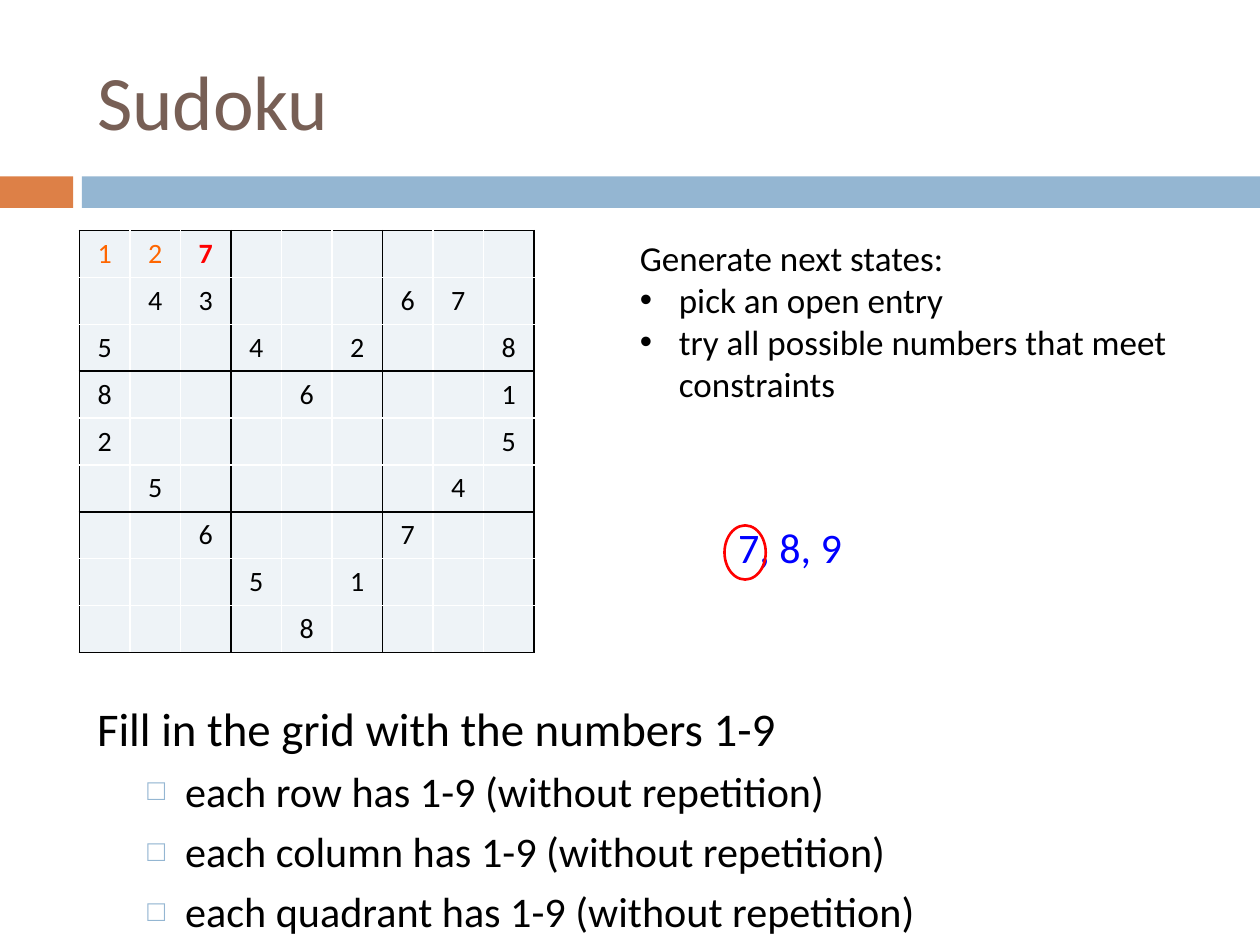
import pptx
import pptx.util
import pptx.dml.color
import pptx.enum.shapes
import pptx.enum.text
import pptx.oxml
import pptx.oxml.ns
import lxml.etree

COLS, ROWS = 100, 75
FONT = "Calibri"
COLORS = {
    "title": "775F55", "accent": "DD8047", "band": "94B6D2",
    "cell": "EEF3F7", "black": "000000", "white": "FFFFFF",
    "filled": "FF6600", "red": "FF0000", "blue": "0000FF",
}
GRID = [
    "127......",
    ".43...67.",
    "5..4.2..8",
    "8...6...1",
    "2.......5",
    ".5.....4.",
    "..6...7..",
    "...5.1...",
    "....8....",
]
TRIED = {(0, 0): "filled", (0, 1): "filled", (0, 2): "red"}
ALIGN = pptx.enum.text.PP_ALIGN
SHAPE = pptx.enum.shapes.MSO_SHAPE

prs = pptx.Presentation()
prs.slide_width = pptx.util.Inches(10)
prs.slide_height = pptx.util.Inches(7.5)


def place(x, y, w, h):
    col, row = prs.slide_width / COLS, prs.slide_height / ROWS
    return [pptx.util.Emu(round(n)) for n in (x * col, y * row, w * col, h * row)]


def move(sp, box):
    sp.left, sp.top, sp.width, sp.height = place(*box)


def rgb(name):
    return pptx.dml.color.RGBColor.from_string(COLORS[name])


def style(p, size, color, bold=False):
    p.font.name = FONT
    p.font.size = pptx.util.Pt(size)
    p.font.bold = bold
    p.font.color.rgb = rgb(color)


def add_child(parent, tag, **attrs):
    child = lxml.etree.SubElement(parent, pptx.oxml.ns.qn(tag))
    for key, value in attrs.items():
        child.set(key, str(value))
    return child


def set_bullet(p, char=None, left=0, hang=0, color="black", percent=100):
    pPr = p._p.get_or_add_pPr()
    pPr.set("marL", str(pptx.util.Inches(left)))
    pPr.set("indent", str(-pptx.util.Inches(hang)))
    if char is None:
        add_child(pPr, "a:buNone")
        return
    add_child(add_child(pPr, "a:buClr"), "a:srgbClr", val=COLORS[color])
    add_child(pPr, "a:buSzPct", val=percent * 1000)
    add_child(pPr, "a:buFont", typeface="Arial")
    add_child(pPr, "a:buChar", char=char)


def fill_paragraphs(tf, lines):
    tf.text = "\n".join(lines)
    return tf.paragraphs


def set_borders(cell, **sides):
    tcPr = cell._tc.get_or_add_tcPr()
    for side in "LRTB":
        ln = add_child(tcPr, "a:ln" + side, w=pptx.util.Pt(1))
        add_child(add_child(ln, "a:solidFill"), "a:srgbClr", val=COLORS[sides[side]])


def add_bars(s, box):
    x, y, w, h = box
    gap = 6.5
    for left, width, color in ((x, 5.8, "accent"), (x + gap, w - gap, "band")):
        sp = s.shapes.add_shape(SHAPE.RECTANGLE, *place(left, y, width, h))
        sp.shadow.inherit = False
        sp.fill.solid()
        sp.fill.fore_color.rgb = rgb(color)
        sp.line.fill.background()


def add_title(s, box):
    sp = s.shapes.title
    move(sp, box)
    tf = sp.text_frame
    tf.vertical_anchor = pptx.enum.text.MSO_ANCHOR.MIDDLE
    p = fill_paragraphs(tf, ["Sudoku"])[0]
    p.alignment = ALIGN.LEFT
    style(p, 44, "title")


def add_sudoku(s, box):
    n = len(GRID)
    table = s.shapes.add_table(n, n, *place(*box)).table
    table.first_row = table.horz_banding = False
    for r, line in enumerate(GRID):
        for c, digit in enumerate(line):
            cell = table.cell(r, c)
            set_borders(
                cell,
                L="black" if c % 3 == 0 else "white",
                R="black" if c % 3 == 2 else "white",
                T="black" if r % 3 == 0 else "white",
                B="black" if r % 3 == 2 else "white",
            )
            cell.fill.solid()
            cell.fill.fore_color.rgb = rgb("cell")
            p = cell.text_frame.paragraphs[0]
            p.text = digit.strip(".")
            p.alignment = ALIGN.CENTER
            color = TRIED.get((r, c), "black")
            style(p, 16, color, color == "red")


def add_rules(s, box):
    sp = s.placeholders[1]
    move(sp, box)
    tf = sp.text_frame
    tf.auto_size = pptx.enum.text.MSO_AUTO_SIZE.NONE
    tf.vertical_anchor = pptx.enum.text.MSO_ANCHOR.TOP
    units = ("row", "column", "quadrant")
    lines = [f"each {unit} has 1-9 (without repetition)" for unit in units]
    head, *items = fill_paragraphs(tf, ["Fill in the grid with the numbers 1-9"] + lines)
    head.space_before = pptx.util.Pt(7)
    set_bullet(head)
    style(head, 26.8, "black")
    for p in items:
        p.level = 1
        p.space_before = pptx.util.Pt(5.5)
        set_bullet(p, "□", 0.7, 0.3, "band", 70)
        style(p, 24.1, "black")


def add_steps(s, box):
    tf = s.shapes.add_textbox(*place(*box)).text_frame
    tf.word_wrap = True
    head, *items = fill_paragraphs(tf, [
        "Generate next states:",
        "pick an open entry",
        "try all possible numbers that meet constraints",
    ])
    style(head, 20, "black")
    for p in items:
        set_bullet(p, "•", 0.31, 0.31)
        style(p, 20, "black")


def add_candidates(s, box):
    x, y, w, h = box
    tf = s.shapes.add_textbox(*place(*box)).text_frame
    tf.word_wrap = False
    style(fill_paragraphs(tf, ["7, 8, 9"])[0], 24, "blue")
    ring = s.shapes.add_shape(SHAPE.OVAL, *place(x - 0.1, y + 0.8, 0.3 * w, 0.86 * h))
    ring.shadow.inherit = False
    ring.fill.background()
    ring.line.color.rgb = rgb("red")
    ring.line.width = pptx.util.Pt(1.5)


def main():
    s = prs.slides.add_slide(prs.slide_layouts[1])
    add_bars(s, (0, 14, COLS, 2.5))
    add_title(s, (6.7, 2.5, 89.2, 10.8))
    add_sudoku(s, (6.3, 18.3, 36.1, 33.3))
    add_rules(s, (6.7, 55, 89.2, 17.5))
    add_steps(s, (49.8, 18.3, 48.6, 17.8))
    add_candidates(s, (57.6, 40.9, 10.9, 5))
    prs.save("out.pptx")


if __name__ == "__main__":
    main()
